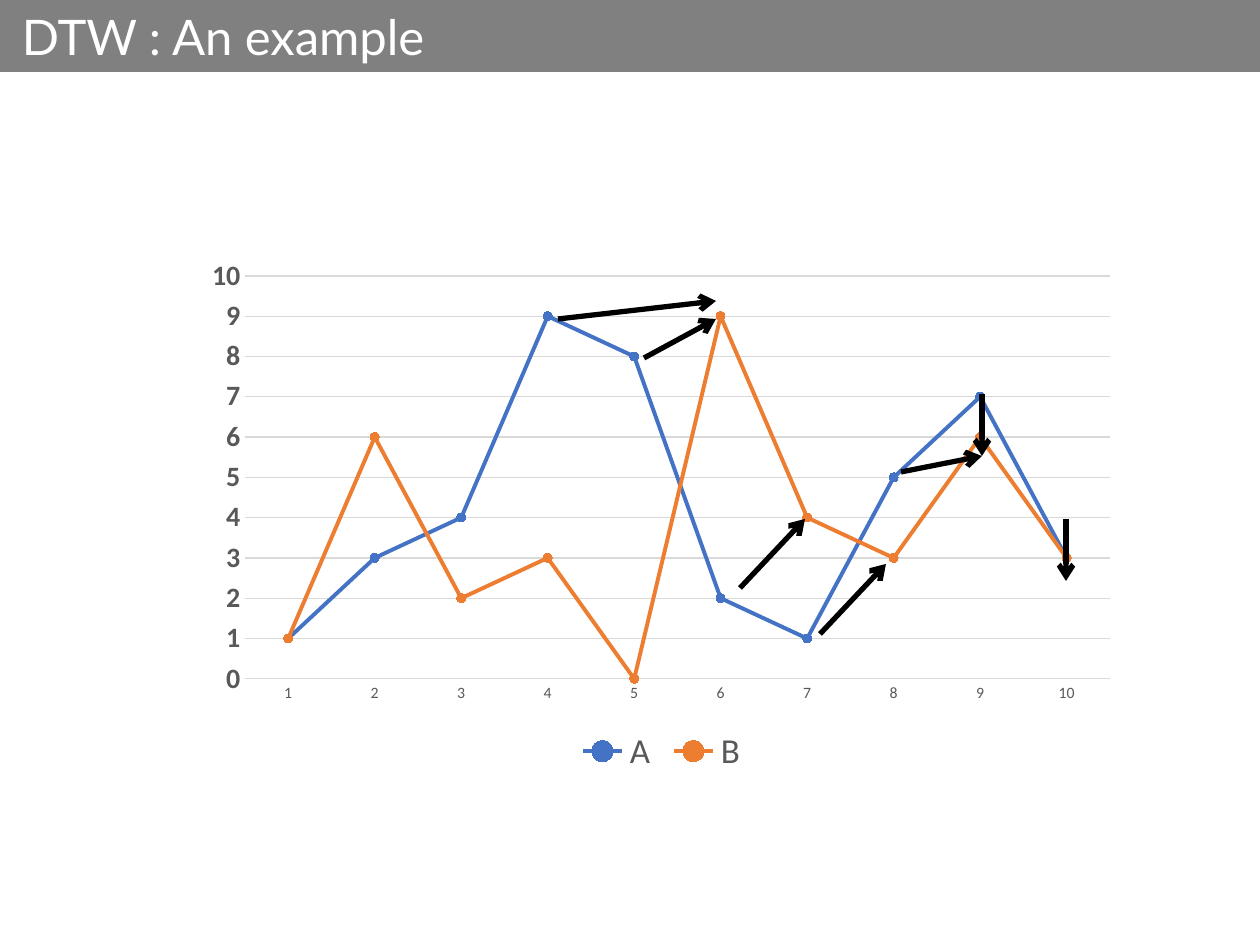
from dataclasses import dataclass

from lxml import etree
from pptx import Presentation
from pptx.chart.data import CategoryChartData
from pptx.dml.color import RGBColor
from pptx.enum.chart import XL_CHART_TYPE, XL_LEGEND_POSITION, XL_MARKER_STYLE, XL_TICK_MARK
from pptx.enum.shapes import MSO_CONNECTOR, MSO_SHAPE
from pptx.enum.text import MSO_ANCHOR, PP_ALIGN
from pptx.oxml.ns import qn
from pptx.util import Emu, Pt

LINE_MARKERS = XL_CHART_TYPE.LINE_MARKERS
LEGEND_BOTTOM = XL_LEGEND_POSITION.BOTTOM
CIRCLE = XL_MARKER_STYLE.CIRCLE
NO_TICK = XL_TICK_MARK.NONE
STRAIGHT = MSO_CONNECTOR.STRAIGHT
RECTANGLE = MSO_SHAPE.RECTANGLE
MIDDLE = MSO_ANCHOR.MIDDLE
LEFT = PP_ALIGN.LEFT

PX_PER_INCH = 126
EMU_PER_PX = 914400 / PX_PER_INCH
SLIDE_WIDTH, SLIDE_HEIGHT = 1260, 945


@dataclass(frozen=True)
class Theme:
    title_font: str = "Lato"
    chart_font: str = "Calibri"
    title_size: int = 28
    legend_size: int = 20
    value_size: int = 16
    category_size: int = 9
    marker_size: int = 5
    series_width: float = 2.25
    arrow_width: float = 3
    grid_width: float = 0.75
    banner: str = "808080"
    title: str = "FFFFFF"
    label: str = "595959"
    grid: str = "D9D9D9"
    arrow: str = "000000"


@dataclass(frozen=True)
class Box:
    left: int
    top: int
    width: int
    height: int


@dataclass(frozen=True)
class Series:
    name: str
    color: str
    values: tuple[int, ...]


@dataclass(frozen=True)
class Arrow:
    start: tuple[int, int]
    end: tuple[int, int]


THEME = Theme()
BANNER = Box(0, 0, SLIDE_WIDTH, 72)
CHART = Box(194, 248, 935, 532)
PLOT = Box(245, 276, 865, 403)
SERIES = (
    Series("A", "4472C4", (1, 3, 4, 9, 8, 2, 1, 5, 7, 3)),
    Series("B", "ED7D31", (1, 6, 2, 3, 0, 9, 4, 3, 6, 3)),
)
ARROWS = (
    Arrow((982, 394), (982, 456)),
    Arrow((1066, 519), (1066, 581)),
    Arrow((901, 472), (982, 456)),
    Arrow((820, 634), (886, 564)),
    Arrow((740, 588), (805, 519)),
    Arrow((644, 358), (716, 319)),
    Arrow((558, 319), (716, 301)),
)


def px(length: int) -> Emu:
    return Emu(round(length * EMU_PER_PX))


def place(box: Box) -> tuple[Emu, ...]:
    return px(box.left), px(box.top), px(box.width), px(box.height)


def style_font(font, name: str, size: int, color: str, bold: bool = False) -> None:
    font.name = name
    font.size = Pt(size)
    font.bold = bold
    font.color.rgb = RGBColor.from_string(color)


def style_line(line, color: str, width: float) -> None:
    line.color.rgb = RGBColor.from_string(color)
    line.width = Pt(width)


def add_banner(slide, text: str) -> None:
    shape = slide.shapes.add_shape(RECTANGLE, *place(BANNER))
    shape.shadow.inherit = False
    shape.fill.solid()
    shape.fill.fore_color.rgb = RGBColor.from_string(THEME.banner)
    shape.line.fill.background()
    text_frame = shape.text_frame
    text_frame.text = text
    text_frame.word_wrap = True
    text_frame.vertical_anchor = MIDDLE
    text_frame.margin_left = px(22)
    paragraph = text_frame.paragraphs[0]
    paragraph.alignment = LEFT
    style_font(paragraph.runs[0].font, THEME.title_font, THEME.title_size, THEME.title)


def fix_plot_area(chart) -> None:
    plot_area = chart.plots[0]._element.getparent()
    for old_layout in plot_area.findall(qn("c:layout")):
        plot_area.remove(old_layout)
    layout = etree.Element(qn("c:layout"))
    manual = etree.SubElement(layout, qn("c:manualLayout"))
    settings = {
        "layoutTarget": "inner",
        "xMode": "edge",
        "yMode": "edge",
        "x": (PLOT.left - CHART.left) / CHART.width,
        "y": (PLOT.top - CHART.top) / CHART.height,
        "w": PLOT.width / CHART.width,
        "h": PLOT.height / CHART.height,
    }
    for tag, value in settings.items():
        etree.SubElement(manual, qn(f"c:{tag}")).set("val", str(value))
    plot_area.insert(0, layout)


def style_axes(chart) -> None:
    category_axis, value_axis = chart.category_axis, chart.value_axis
    for axis in (category_axis, value_axis):
        axis.major_tick_mark = NO_TICK
        axis.minor_tick_mark = NO_TICK
    style_font(category_axis.tick_labels.font, THEME.chart_font, THEME.category_size, THEME.label)
    style_line(category_axis.format.line, THEME.grid, THEME.grid_width)
    style_font(value_axis.tick_labels.font, THEME.chart_font, THEME.value_size, THEME.label, True)
    value_axis.minimum_scale = 0
    value_axis.maximum_scale = 10
    value_axis.major_unit = 1
    value_axis.format.line.fill.background()
    style_line(value_axis.major_gridlines.format.line, THEME.grid, THEME.grid_width)


def add_line_chart(slide) -> None:
    data = CategoryChartData()
    data.categories = [str(step) for step in range(1, 11)]
    for series in SERIES:
        data.add_series(series.name, series.values)
    chart = slide.shapes.add_chart(LINE_MARKERS, *place(CHART), data).chart
    chart.has_title = False
    chart.font.name = THEME.chart_font
    chart.has_legend = True
    chart.legend.position = LEGEND_BOTTOM
    chart.legend.include_in_layout = False
    style_font(chart.legend.font, THEME.chart_font, THEME.legend_size, THEME.label)
    style_axes(chart)
    plot = chart.plots[0]
    plot.vary_by_categories = False
    for series, drawn in zip(SERIES, plot.series):
        drawn.smooth = False
        style_line(drawn.format.line, series.color, THEME.series_width)
        marker = drawn.marker
        marker.style = CIRCLE
        marker.size = THEME.marker_size
        marker.format.fill.solid()
        marker.format.fill.fore_color.rgb = RGBColor.from_string(series.color)
        style_line(marker.format.line, series.color, THEME.grid_width)
    fix_plot_area(chart)


def add_arrow(slide, arrow: Arrow) -> None:
    ends = (px(length) for length in arrow.start + arrow.end)
    connector = slide.shapes.add_connector(STRAIGHT, *ends)
    style_line(connector.line, THEME.arrow, THEME.arrow_width)
    properties = connector._element.spPr
    etree.SubElement(properties.find(qn("a:ln")), qn("a:tailEnd")).set("type", "arrow")
    etree.SubElement(properties, qn("a:effectLst"))


def main() -> None:
    presentation = Presentation()
    presentation.slide_width = px(SLIDE_WIDTH)
    presentation.slide_height = px(SLIDE_HEIGHT)
    slide = presentation.slides.add_slide(presentation.slide_layouts[6])
    add_line_chart(slide)
    add_banner(slide, "DTW : An example")
    for arrow in ARROWS:
        add_arrow(slide, arrow)
    presentation.save("out.pptx")


if __name__ == "__main__":
    main()
